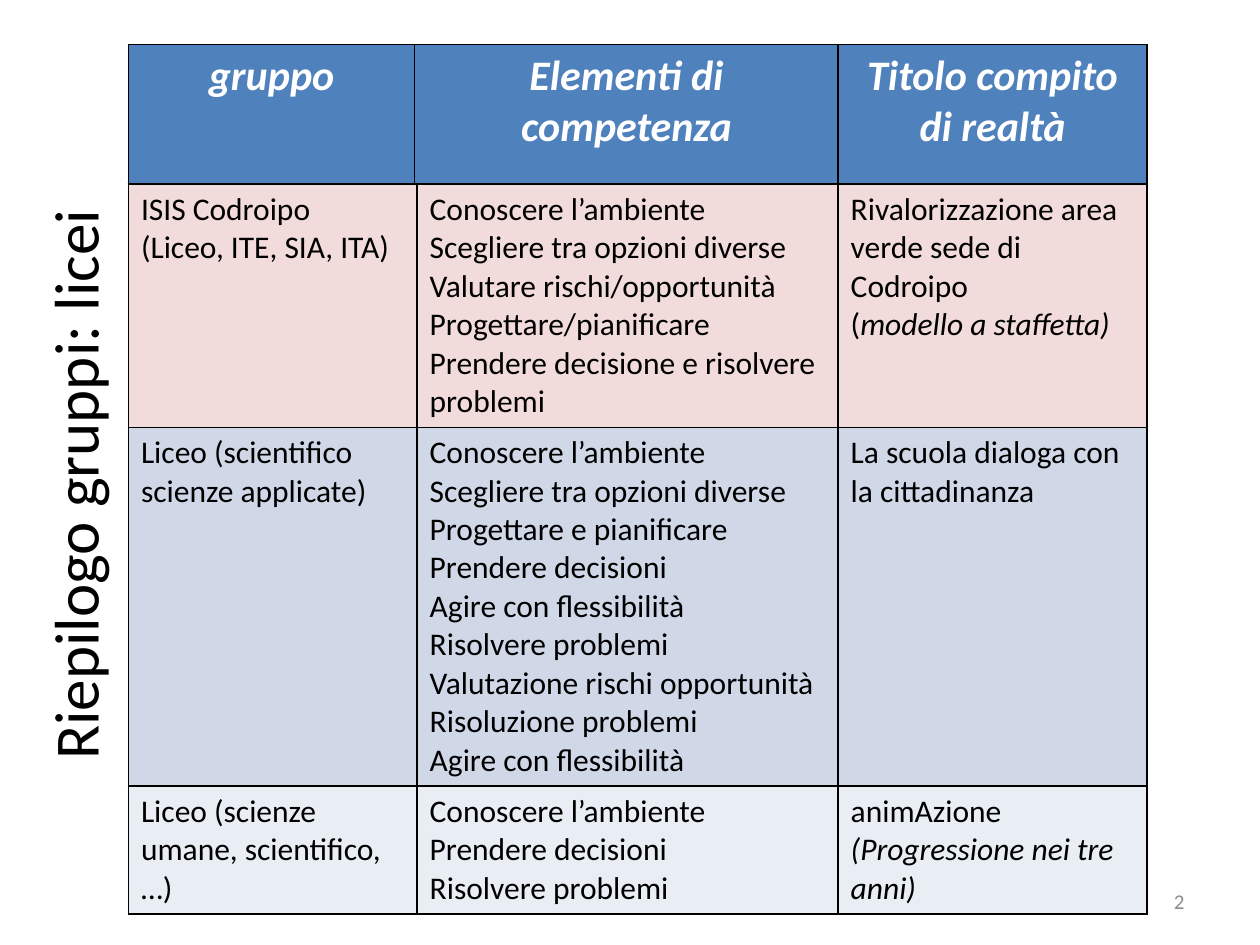
from lxml.etree import SubElement
from pptx import Presentation
from pptx.dml.color import RGBColor
from pptx.enum.text import MSO_ANCHOR as Anchor, PP_ALIGN as Align
from pptx.oxml.ns import qn
from pptx.util import Pt

BLACK = RGBColor(0x00, 0x00, 0x00)
WHITE = RGBColor(0xFF, 0xFF, 0xFF)
GREY = RGBColor(0x8C, 0x8C, 0x8C)
BLUE = RGBColor(0x4F, 0x81, 0xBD)
PINK = RGBColor(0xF2, 0xDC, 0xDB)
LIGHT_BLUE = RGBColor(0xD0, 0xD8, 0xE8)
PALE_BLUE = RGBColor(0xE9, 0xED, 0xF4)

TABLE_LEFT = 73.4
HEADINGS = [["gruppo"], ["Elementi di competenza"], ["Titolo compito di realtà"]]
GROUPS = [
    [
        ["ISIS Codroipo", "(Liceo, ITE, SIA, ITA)"],
        ["Conoscere l’ambiente", "Scegliere tra opzioni diverse",
         "Valutare rischi/opportunità", "Progettare/pianificare",
         "Prendere decisione e risolvere problemi"],
        ["Rivalorizzazione area verde sede di Codroipo",
         ("(", "modello a staffetta)")],
    ],
    [
        ["Liceo (scientifico scienze applicate)"],
        ["Conoscere l’ambiente", "Scegliere tra opzioni diverse",
         "Progettare e pianificare", "Prendere decisioni",
         "Agire con flessibilità", "Risolvere problemi",
         "Valutazione rischi opportunità", "Risoluzione problemi",
         "Agire con flessibilità"],
        ["La scuola dialoga con la cittadinanza"],
    ],
    [
        ["Liceo (scienze umane, scientifico, …)"],
        ["Conoscere l’ambiente", "Prendere decisioni", "Risolvere problemi"],
        ["animAzione", ("", "(Progressione nei tre anni)")],
    ],
]


def write_text(frame, lines, size=18, color=BLACK, bold=False, italic=False,
               align=Align.LEFT):
    """Fill a text frame; a (plain, slanted) pair makes a line end in italics."""
    for index, line in enumerate(lines):
        paragraph = frame.paragraphs[0] if index == 0 else frame.add_paragraph()
        paragraph.alignment = align
        plain, slanted = (line, "") if isinstance(line, str) else line
        for words, is_slanted in ((plain, italic), (slanted, True)):
            if words:
                run = paragraph.add_run()
                run.text = words
                font = run.font
                font.name, font.size = "Calibri", Pt(size)
                font.bold, font.italic = bold, is_slanted
                font.color.rgb = color


def add_label(slide, words, left, top, width, height, rotation=0, **style):
    """Add a vertically centred text box."""
    label = slide.shapes.add_textbox(Pt(left), Pt(top), Pt(width), Pt(height))
    label.rotation = rotation
    label.text_frame.word_wrap = True
    label.text_frame.vertical_anchor = Anchor.MIDDLE
    write_text(label.text_frame, [words], **style)


def outline_cell(cell):
    """Draw a one-point black border on the four sides of a cell."""
    properties = cell._tc.get_or_add_tcPr()
    for position, side in enumerate(("a:lnL", "a:lnR", "a:lnT", "a:lnB")):
        border = SubElement(properties, qn(side), w=str(Pt(1)))
        fill = SubElement(border, qn("a:solidFill"))
        SubElement(fill, qn("a:srgbClr"), val=str(BLACK))
        properties.insert(position, border)


def add_grid(slide, top, widths, heights, rows, fills, **style):
    """Add a bordered table with one fill colour per row."""
    table = slide.shapes.add_table(
        len(heights), len(widths), Pt(TABLE_LEFT), Pt(top),
        Pt(sum(widths)), Pt(sum(heights))).table
    table.first_row = table.horz_banding = False
    for column, width in zip(table.columns, widths):
        column.width = Pt(width)
    for row, height, contents, color in zip(table.rows, heights, rows, fills):
        row.height = Pt(height)
        for cell, lines in zip(row.cells, contents):
            cell.fill.solid()
            cell.fill.fore_color.rgb = color
            outline_cell(cell)
            write_text(cell.text_frame, lines, **style)


def main():
    """Build the slide and save it."""
    deck = Presentation()
    deck.slide_width, deck.slide_height = Pt(720), Pt(540)
    slide = deck.slides.add_slide(deck.slide_layouts[6])
    add_grid(slide, 105.1, [165, 240.6, 176.4], [138.5, 204.5, 72.5], GROUPS,
             [PINK, LIGHT_BLUE, PALE_BLUE])
    add_label(slide, "Riepilogo gruppi: licei", -188, 260.6, 460, 33,
              rotation=270, size=36, align=Align.CENTER)
    add_label(slide, "2", 516, 500.5, 168, 28.8, size=12, color=GREY,
              align=Align.RIGHT)
    add_grid(slide, 25.4, [163.6, 242, 176.4], [79.5], [HEADINGS], [BLUE],
             size=24, color=WHITE, bold=True, italic=True, align=Align.CENTER)
    deck.save("out.pptx")


if __name__ == "__main__":
    main()
